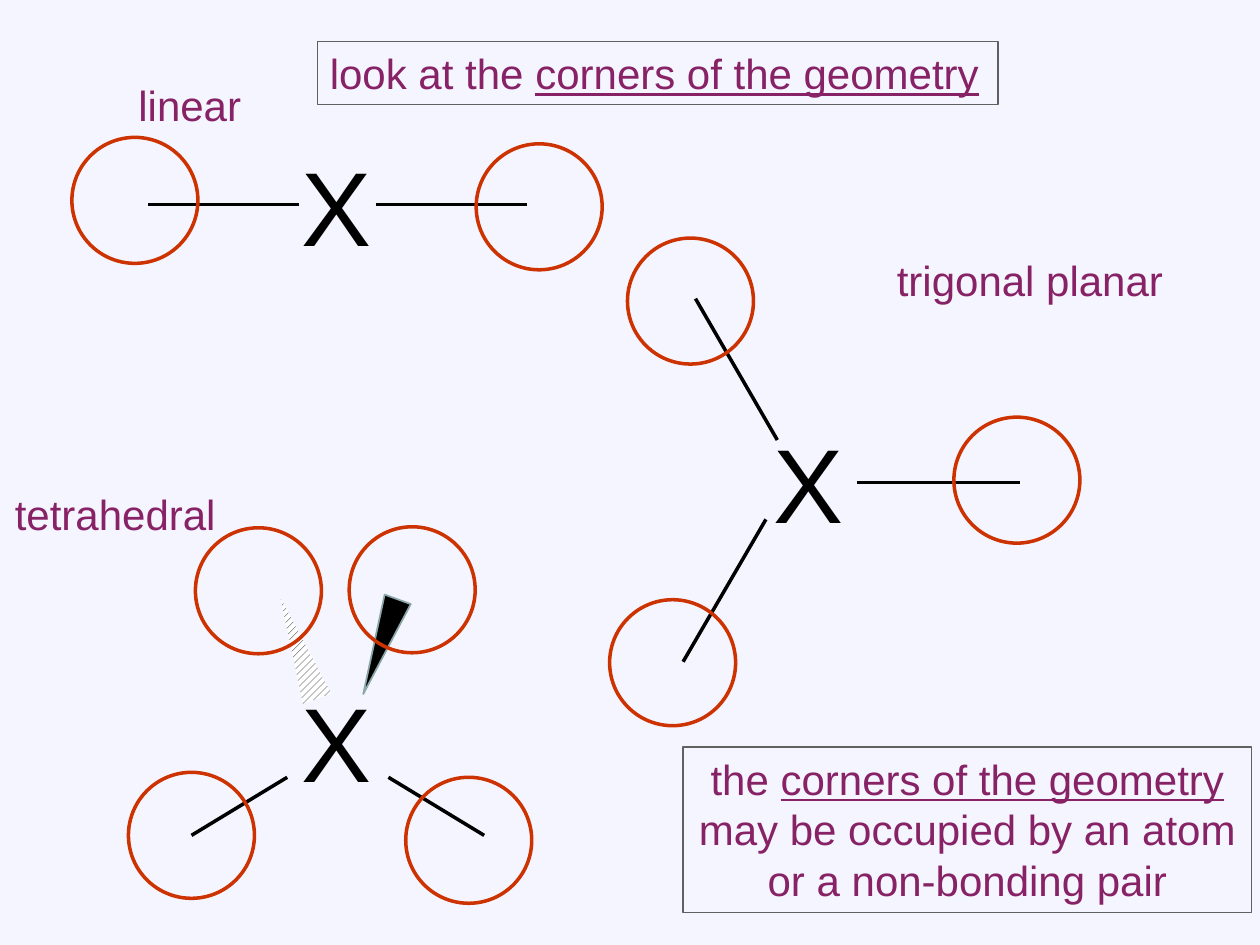
from lxml.etree import SubElement
from pptx import Presentation
from pptx.dml.color import RGBColor
from pptx.enum.dml import MSO_PATTERN
from pptx.enum.shapes import MSO_CONNECTOR, MSO_SHAPE
from pptx.enum.text import MSO_AUTO_SIZE, PP_ALIGN
from pptx.oxml.ns import qn
from pptx.util import Cm, Pt

BACKGROUND = RGBColor(0xF5, 0xF5, 0xFF)
PLUM = RGBColor(0x86, 0x22, 0x65)
BLACK = RGBColor(0x00, 0x00, 0x00)
WHITE = RGBColor(0xFF, 0xFF, 0xFF)
ORANGE = RGBColor(0xCC, 0x33, 0x00)
FRAME_GREY = RGBColor(0x60, 0x60, 0x60)
WEDGE_EDGE = RGBColor(0x8A, 0xA6, 0xA8)

CORNER_SIZE = 2.54
ATOM_BOX = (1.93, 2.82)
LABEL_HEIGHT = 1.27


def add_text(shapes, box, paragraphs, size=24, color=PLUM,
             align=PP_ALIGN.LEFT, frame=None):
    """Each paragraph is a list of (words, underlined) runs."""
    textbox = shapes.add_textbox(*map(Cm, box))
    if frame is not None:
        textbox.line.color.rgb = frame
        textbox.line.width = Pt(0.75)
    text = textbox.text_frame
    text.word_wrap = False
    text.auto_size = MSO_AUTO_SIZE.SHAPE_TO_FIT_TEXT
    for index, runs in enumerate(paragraphs):
        paragraph = text.add_paragraph() if index else text.paragraphs[0]
        paragraph.alignment = align
        for words, underlined in runs:
            run = paragraph.add_run()
            run.text = words
            run.font.name = "Arial"
            run.font.size = Pt(size)
            run.font.color.rgb = color
            run.font.underline = underlined


def add_bond(shapes, start, end):
    bond = shapes.add_connector(MSO_CONNECTOR.STRAIGHT, *map(Cm, start + end))
    bond.line.color.rgb = BLACK
    bond.line.width = Pt(2)
    SubElement(bond._element.spPr, qn("a:effectLst"))


def add_wedge(shapes, box, rotation, hashed):
    wedge = shapes.add_shape(MSO_SHAPE.ISOSCELES_TRIANGLE, *map(Cm, box))
    wedge.shadow.inherit = False
    wedge.rotation = rotation
    if hashed:
        wedge.fill.patterned()
        wedge.fill.pattern = MSO_PATTERN.WIDE_UPWARD_DIAGONAL
        wedge.fill.fore_color.rgb = BLACK
        wedge.fill.back_color.rgb = WHITE
        wedge.line.fill.background()
    else:
        wedge.fill.solid()
        wedge.fill.fore_color.rgb = BLACK
        wedge.line.color.rgb = WEDGE_EDGE
        wedge.line.width = Pt(1)


def add_corner(shapes, x, y):
    """Ring one corner of the geometry, centred on x, y."""
    corner = shapes.add_shape(
        MSO_SHAPE.OVAL, Cm(x - CORNER_SIZE / 2), Cm(y - CORNER_SIZE / 2),
        Cm(CORNER_SIZE), Cm(CORNER_SIZE))
    corner.shadow.inherit = False
    corner.fill.background()
    corner.line.color.rgb = ORANGE
    corner.line.width = Pt(2)


def add_molecule(slide, left, top, name, label, bonds, corners, wedges=()):
    """Draw a geometry; all offsets count from the top left of its X."""
    def place(x, y):
        return left + x, top + y

    molecule = slide.shapes.add_group_shape().shapes
    add_text(molecule, (left, top, *ATOM_BOX), [[("X", False)]],
             size=60, color=BLACK)
    for start, end in bonds:
        add_bond(molecule, place(*start), place(*end))
    for x, y, width, height, rotation, hashed in wedges:
        add_wedge(molecule, (*place(x, y), width, height), rotation, hashed)
    label_x, label_y, label_width = label
    add_text(slide.shapes,
             (*place(label_x, label_y), label_width, LABEL_HEIGHT),
             [[(name, False)]])
    for corner in corners:
        add_corner(slide.shapes, *place(*corner))


def main():
    presentation = Presentation()
    presentation.slide_width = Cm(25.4)
    presentation.slide_height = Cm(19.05)
    slide = presentation.slides.add_slide(presentation.slide_layouts[6])
    slide.background.fill.solid()
    slide.background.fill.fore_color.rgb = BACKGROUND

    add_molecule(
        slide, 5.82, 13.54, "tetrahedral", label=(-5.77, -3.81, 4.6),
        bonds=[((2.01, 2.13), (3.94, 3.3)), ((-0.03, 2.13), (-1.96, 3.3))],
        corners=[(-1.96, 3.3), (-0.61, -1.63), (2.49, -1.65), (3.63, 3.4)],
        wedges=[(1.57, -1.52, 0.56, 2.03, 200, False),
                (-0.1, -1.55, 0.61, 2.16, 340, True)])
    add_molecule(
        slide, 5.82, 2.72, "linear", label=(-3.28, -1.24, 2.62),
        bonds=[((1.75, 1.4), (4.8, 1.4)), ((-2.84, 1.4), (0.2, 1.4))],
        corners=[(-3.1, 1.32), (5.05, 1.45)])
    add_molecule(
        slide, 15.34, 8.31, "trigonal planar", label=(2.49, -3.3, 5.94),
        bonds=[((1.93, 1.42), (5.23, 1.42)), ((-1.32, -2.29), (0.33, 0.56)),
               ((-1.57, 5.03), (0.1, 2.16))],
        corners=[(5.16, 1.37), (-1.42, -2.24), (-1.78, 5.05)])

    corners_phrase = ("corners of the geometry", True)
    add_text(slide.shapes, (6.4, 0.84, 13.72, LABEL_HEIGHT),
             [[("look at the ", False), corners_phrase]], frame=FRAME_GREY)
    add_text(slide.shapes, (13.77, 15.06, 11.46, 3.33),
             [[("the ", False), corners_phrase],
              [("may be occupied by an atom", False)],
              [("or a non-bonding pair", False)]],
             align=PP_ALIGN.CENTER, frame=FRAME_GREY)

    presentation.save("out.pptx")


if __name__ == "__main__":
    main()
